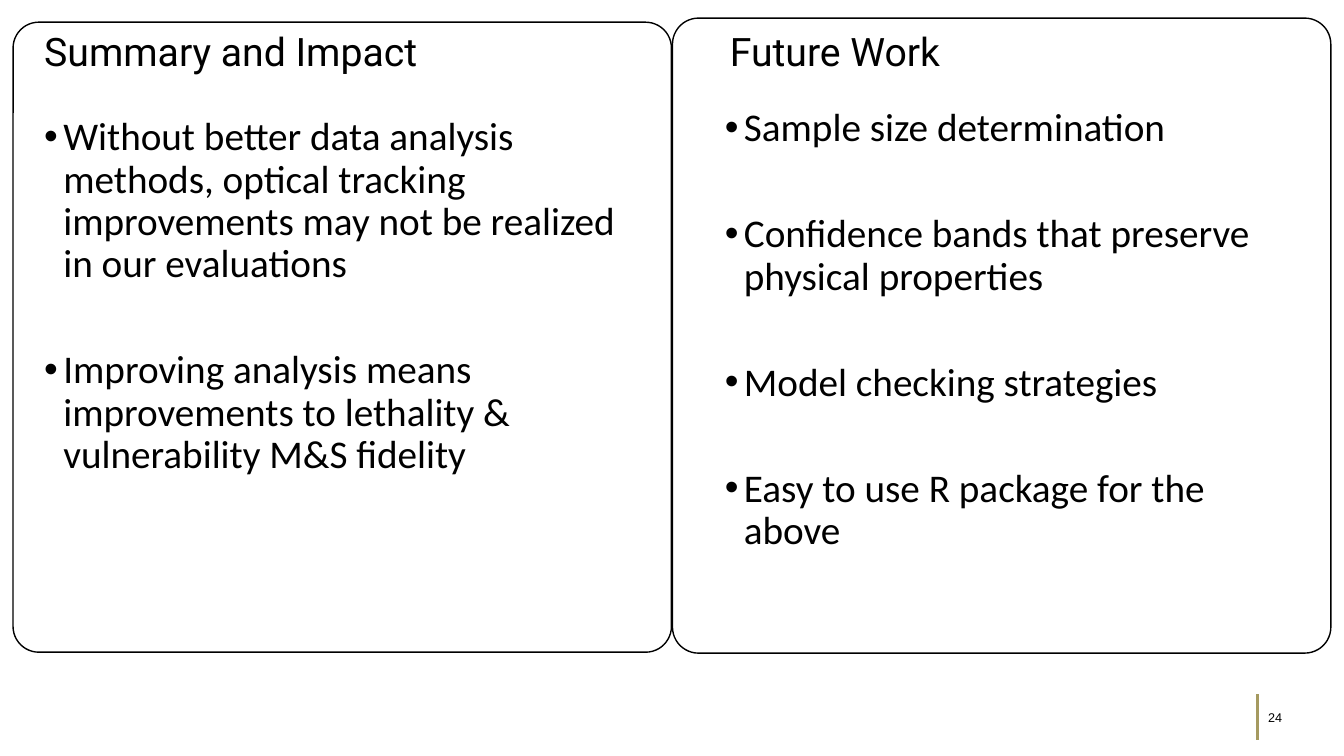
from lxml import etree
from pptx import Presentation
from pptx.dml.color import RGBColor
from pptx.enum.shapes import MSO_CONNECTOR as CONNECTOR, MSO_SHAPE as SHAPE
from pptx.enum.text import MSO_ANCHOR as ANCHOR
from pptx.oxml.ns import qn
from pptx.util import Emu, Pt

EMU_PER_PX = 9144
BLACK = "000000"
GOLD = "A59A60"
BULLET_INDENT = 19


def px(length):
    """Turn whole px (100 to the inch) into EMU."""
    return Emu(length * EMU_PER_PX)


def color(hex_code):
    """Turn a hex string into a colour."""
    return RGBColor.from_string(hex_code)


def add_text(slide, box, lines, font_name, size, anchor=ANCHOR.TOP, bulleted=False):
    """Write the lines as paragraphs in a wrapped text box."""
    frame = slide.shapes.add_textbox(*map(px, box)).text_frame
    frame.word_wrap = True
    frame.vertical_anchor = anchor
    frame.text = "\n".join(lines)
    for index, paragraph in enumerate(frame.paragraphs):
        if bulleted:
            add_bullet(paragraph)
            paragraph.line_spacing = 0.9
            paragraph.space_before = Pt(45.5 if index else 0)
        paragraph.font.name = font_name
        paragraph.font.size = Pt(size)
        paragraph.font.color.rgb = color(BLACK)


def add_bullet(paragraph):
    """Give a paragraph a round bullet with a hanging indent."""
    properties = paragraph._p.get_or_add_pPr()
    properties.set("marL", str(px(BULLET_INDENT)))
    properties.set("indent", str(-px(BULLET_INDENT)))
    etree.SubElement(properties, qn("a:buFont"), typeface="Arial")
    etree.SubElement(properties, qn("a:buChar"), char="•")


def add_panel(slide, box, heading, heading_offset, points, points_box):
    """Draw a rounded panel with a heading and bulleted points."""
    left, top, width, height = box
    points_left, points_top, points_width = points_box
    add_text(slide, (left + points_left, top + points_top, points_width, 537),
             points, "Calibri", 28, bulleted=True)
    heading_left, heading_top = heading_offset
    add_text(slide, (left + heading_left, top + heading_top, 410, 100),
             [heading], "Roboto", 28)
    outline = slide.shapes.add_shape(SHAPE.ROUNDED_RECTANGLE, *map(px, box))
    outline.adjustments[0] = 0.041
    outline.shadow.inherit = False
    outline.fill.background()
    outline.line.color.rgb = color(BLACK)
    outline.line.width = Pt(1)


def add_page_mark(slide, box, number):
    """Place the page number beside its gold rule."""
    left, top, width, height = box
    rule = slide.shapes.add_connector(
        CONNECTOR.STRAIGHT, px(left), px(top), px(left), px(top + height))
    rule.line.color.rgb = color(GOLD)
    rule.line.width = Pt(2)
    etree.SubElement(rule._element.spPr, qn("a:effectLst"))
    add_text(slide, (left + 1, top + 9, width, 27), [number], "Arial", 9, ANCHOR.MIDDLE)


def main():
    """Build the closing slide and save it."""
    deck = Presentation()
    deck.slide_width, deck.slide_height = px(1333), px(750)
    slide = deck.slides.add_slide(deck.slide_layouts[6])
    add_page_mark(slide, (1247, 689, 52, 45), "24")
    add_panel(slide, (13, 22, 653, 625), "Summary and Impact", (21, 0), [
        "Without better data analysis methods, optical tracking improvements "
        "may not be realized in our evaluations",
        "Improving analysis means improvements to lethality & vulnerability M&S fidelity",
    ], (21, 89, 590))
    add_panel(slide, (667, 18, 653, 630), "Future Work", (47, 4), [
        "Sample size determination",
        "Confidence bands that preserve physical properties",
        "Model checking strategies",
        "Easy to use R package for the above",
    ], (42, 84, 547))
    deck.save("out.pptx")


if __name__ == "__main__":
    main()
